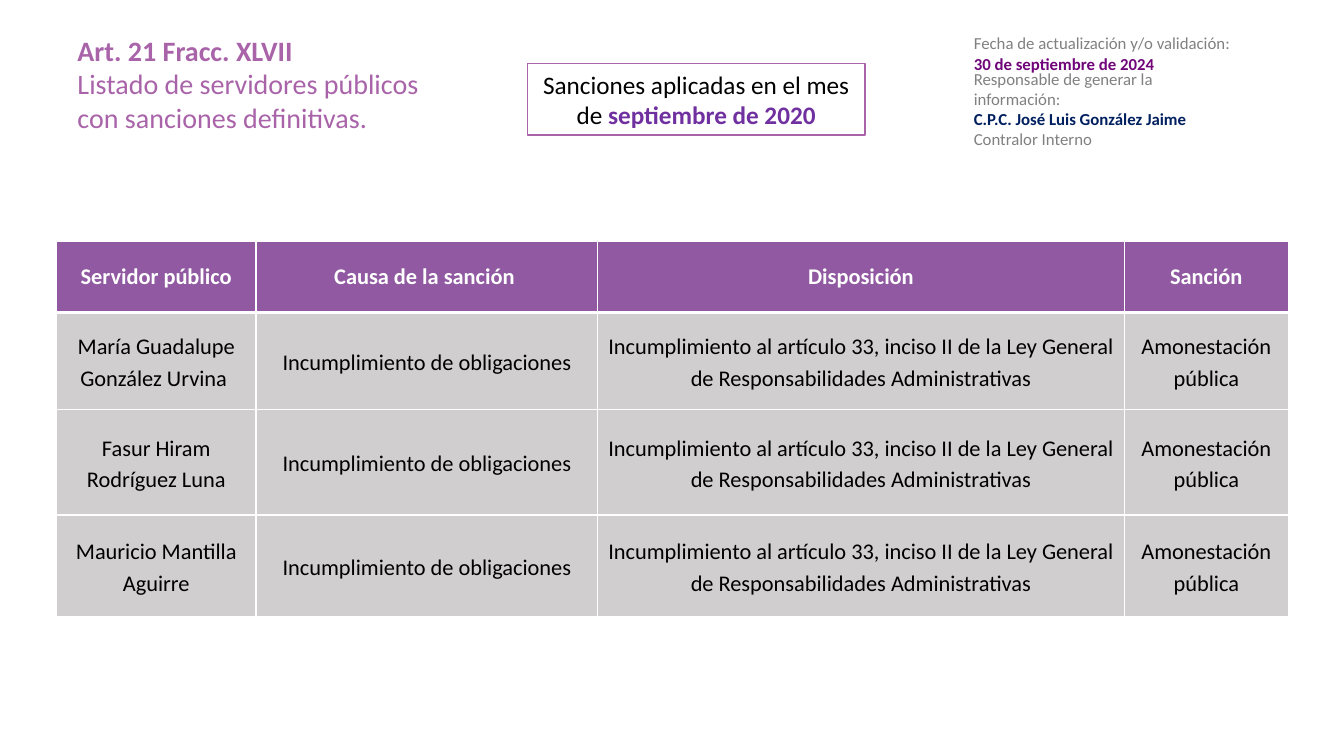
from lxml.etree import SubElement
from pptx import Presentation
from pptx.dml.color import RGBColor as RGB
from pptx.enum.shapes import MSO_SHAPE as SHAPE
from pptx.enum.text import MSO_ANCHOR as ANCHOR, PP_ALIGN as ALIGN
from pptx.oxml.ns import qn
from pptx.util import Pt

PX = 914400 // 100
COLORS = {
    "white": "FFFFFF", "black": "000000", "gray": "808080", "cell": "D0CECE",
    "header": "9059A1", "title": "A963A9", "date": "6F0579",
    "navy": "002060", "month": "7030A0",
}
COLUMNS = {"Servidor público": 198, "Causa de la sanción ": 339,
           "Disposición": 522, "Sanción": 163}
ROW_HEIGHTS = [71, 96, 105, 101]
OFFICIALS = ["María Guadalupe González Urvina ", "Fasur Hiram Rodríguez Luna",
             "Mauricio Mantilla Aguirre"]
CAUSE = "Incumplimiento de obligaciones"
PROVISION = ("Incumplimiento al artículo 33, inciso II de la Ley General "
             "de Responsabilidades Administrativas")
PENALTY = "Amonestación pública"


def color(name):
    return RGB.from_string(COLORS[name])


def emu(box):
    return [length * PX for length in box]


def write(frame, paragraphs, size, **layout):
    for index, runs in enumerate(paragraphs):
        paragraph = frame.paragraphs[0] if index == 0 else frame.add_paragraph()
        for key, value in layout.items():
            setattr(paragraph, key, value)
        for words, tint, bold in runs:
            run = paragraph.add_run()
            run.text = words
            font_format = {"name": "Calibri", "size": Pt(size), "bold": bold}
            for key, value in font_format.items():
                setattr(run.font, key, value)
            run.font.color.rgb = color(tint)


def add_text(slide, box, paragraphs, size, wrap=True):
    frame = slide.shapes.add_textbox(*emu(box)).text_frame
    frame.word_wrap = wrap
    write(frame, paragraphs, size)


def add_heading(slide, box):
    add_text(slide, box, [
        [("Art. 21 Fracc. XLVII", "title", True)],
        [("Listado de servidores públicos con sanciones definitivas.", "title", False)],
    ], 20)


def add_validation(slide, box):
    left, top, width, height = box
    add_text(slide, (left, top, width, 50), [
        [("Fecha de actualización y/o validación:", "gray", False)],
        [("30 de septiembre de 2024", "date", True)],
    ], 12, wrap=False)
    add_text(slide, (left, top + 35, width - 16, height - 35), [
        [("Responsable de generar la información:", "gray", False)],
        [("C.P.C. José Luis González Jaime", "navy", True)],
        [("Contralor Interno", "gray", False)],
    ], 12)


def add_month(slide, box):
    month = slide.shapes.add_shape(SHAPE.RECTANGLE, *emu(box))
    month.shadow.inherit = False
    month.fill.solid()
    month.fill.fore_color.rgb = color("white")
    month.line.color.rgb = color("title")
    month.line.width = Pt(1)
    month.text_frame.word_wrap = True
    write(month.text_frame, [[
        ("Sanciones aplicadas en el mes de ", "black", False),
        ("septiembre de 2020", "month", True),
    ]], 18, alignment=ALIGN.CENTER)


def add_borders(cell, row):
    properties = cell._tc.get_or_add_tcPr()
    for edge in ("lnL", "lnR", "lnT", "lnB"):
        under_header = (row, edge) in ((0, "lnB"), (1, "lnT"))
        line = SubElement(properties, qn(f"a:{edge}"), w=str(Pt(3 if under_header else 1)))
        fill = SubElement(line, qn("a:solidFill"))
        SubElement(fill, qn("a:srgbClr"), val=COLORS["white"])


def add_sanctions(slide, box):
    rows = [list(COLUMNS)] + [[name, CAUSE, PROVISION, PENALTY] for name in OFFICIALS]
    table = slide.shapes.add_table(len(rows), len(COLUMNS), *emu(box)).table
    table.horz_banding = False
    for column, width in zip(table.columns, COLUMNS.values()):
        column.width = width * PX
    for row, height in zip(table.rows, ROW_HEIGHTS):
        row.height = height * PX
    body_format = {"margin_left": 7 * PX, "margin_right": 7 * PX,
                   "margin_top": 0, "margin_bottom": 0}
    for r, texts in enumerate(rows):
        header = r == 0
        for c, words in enumerate(texts):
            cell = table.cell(r, c)
            cell_format = {"vertical_anchor": ANCHOR.MIDDLE}
            if not header:
                cell_format.update(body_format)
            for key, value in cell_format.items():
                setattr(cell, key, value)
            add_borders(cell, r)
            cell.fill.solid()
            cell.fill.fore_color.rgb = color("header" if header else "cell")
            write(cell.text_frame, [[(words, "white" if header else "black", header)]], 16,
                  alignment=ALIGN.CENTER, line_spacing=None if header else 1.15)


def main():
    deck = Presentation()
    deck.slide_width, deck.slide_height = emu((1333, 750))
    slide = deck.slides.add_slide(deck.slide_layouts[6])
    add_validation(slide, (956, 28, 281, 126))
    add_heading(slide, (67, 28, 385, 145))
    add_sanctions(slide, (56, 239, sum(COLUMNS.values()), sum(ROW_HEIGHTS)))
    add_month(slide, (523, 63, 335, 71))
    deck.save("out.pptx")


if __name__ == "__main__":
    main()
